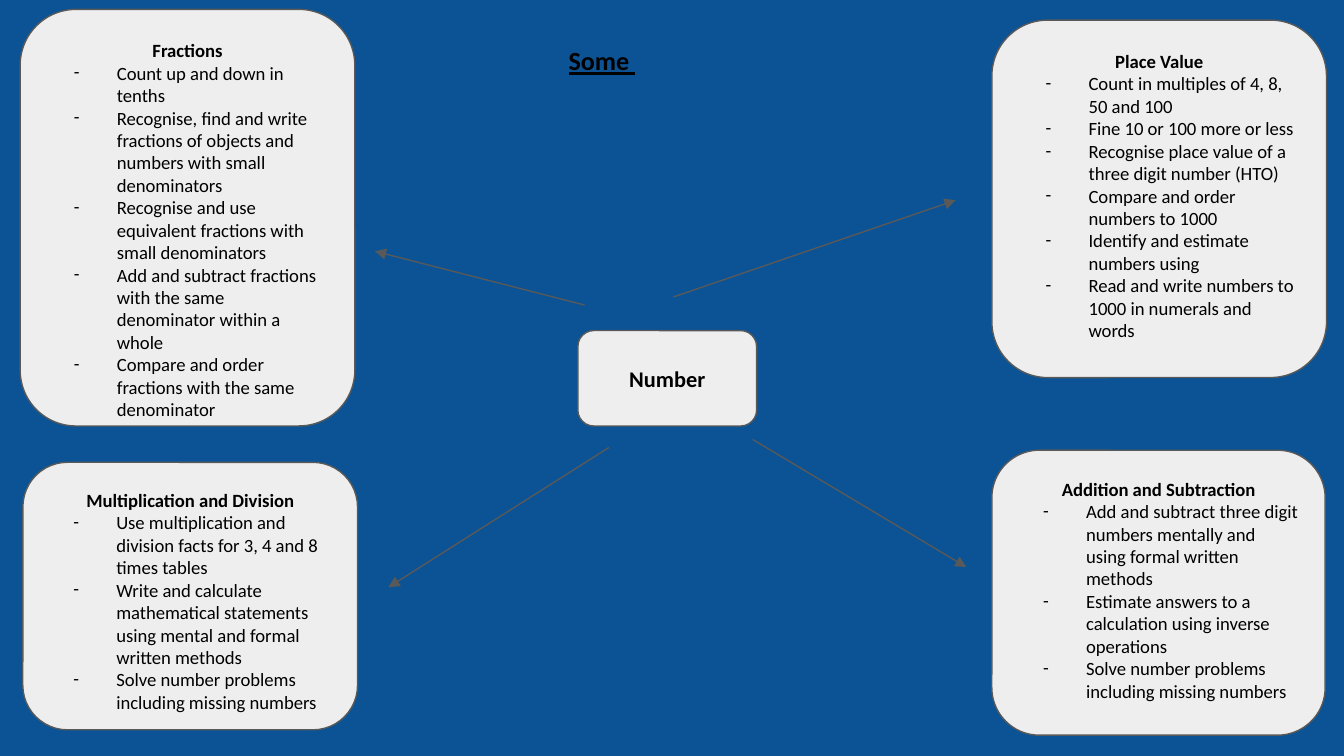
"""Build a mind map of the number curriculum with four topic cards."""
from dataclasses import dataclass
from typing import NamedTuple

from lxml.etree import SubElement
from pptx import Presentation
from pptx.dml.color import RGBColor
from pptx.enum.shapes import MSO_CONNECTOR, MSO_SHAPE
from pptx.enum.text import MSO_ANCHOR, MSO_AUTO_SIZE, PP_ALIGN
from pptx.oxml.ns import qn
from pptx.util import Inches, Pt


@dataclass(frozen=True)
class Theme:
    """Colours, type sizes and line width of the slide."""
    background: str = "0B5394"
    card: str = "EEEEEE"
    outline: str = "595959"
    ink: str = "000000"
    font: str = "Calibri"
    title_size: float = 14
    hub_size: float = 12
    body_size: float = 10
    line_width: float = 0.75


class Box(NamedTuple):
    """A position and size in inches."""
    left: float
    top: float
    width: float
    height: float


class Topic(NamedTuple):
    """A card with a heading and its objectives."""
    heading: str
    box: Box
    objectives: tuple[str, ...] = ()


class Arrow(NamedTuple):
    """An arrow from the hub towards a card."""
    start: tuple[float, float]
    end: tuple[float, float]


THEME = Theme()
CARD_WIDTH = 2.49
RIGHT_COLUMN = 7.38
INSET = 0.1
TITLE_BOX = Box(4.13, 0.23, 2.19, 0.52)
HUB = Topic("Number", Box(4.3, 2.46, 1.33, 0.71))

TOPICS = (
    Topic("Place Value", Box(RIGHT_COLUMN, 0.15, CARD_WIDTH, 2.66), (
        "Count in multiples of 4, 8, 50 and 100",
        "Fine 10 or 100 more or less",
        "Recognise place value of a three digit number (HTO)",
        "Compare and order numbers to 1000",
        "Identify and estimate numbers using",
        "Read and write numbers to 1000 in numerals and words",
    )),
    Topic("Addition and Subtraction", Box(RIGHT_COLUMN, 3.35, 2.48, 2.12), (
        "Add and subtract three digit numbers mentally and using formal written methods",
        "Estimate answers to a calculation using inverse operations",
        "Solve number problems including missing numbers",
    )),
    Topic("Multiplication and Division", Box(0.17, 3.44, CARD_WIDTH, 1.99), (
        "Use multiplication and division facts for 3, 4 and 8 times tables",
        "Write and calculate mathematical statements using mental and formal written methods",
        "Solve number problems including missing numbers",
    )),
    Topic("Fractions", Box(0.15, 0.07, CARD_WIDTH, 3.1), (
        "Count up and down in tenths",
        "Recognise, find and write fractions of objects and numbers with small denominators",
        "Recognise and use equivalent fractions with small denominators",
        "Add and subtract fractions with the same denominator within a whole",
        "Compare and order fractions with the same denominator",
    )),
)

ARROWS = (
    Arrow((5.01, 2.21), (7.11, 1.49)),
    Arrow((5.6, 3.27), (7.19, 4.22)),
    Arrow((4.35, 2.27), (2.79, 1.87)),
    Arrow((4.53, 3.33), (2.89, 4.37)),
)


def colour(value: str) -> RGBColor:
    """Turn a hex value into a colour."""
    return RGBColor.from_string(value)


def style_frame(frame, anchor: MSO_ANCHOR) -> None:
    """Set wrapping, insets and anchor of a text frame."""
    frame.word_wrap = True
    frame.auto_size = MSO_AUTO_SIZE.NONE
    frame.vertical_anchor = anchor
    frame.margin_left = frame.margin_right = Inches(INSET)
    frame.margin_top = frame.margin_bottom = Inches(INSET)


def style_paragraph(paragraph, size: float, bold: bool, align: PP_ALIGN) -> None:
    """Set the font and alignment of a paragraph."""
    paragraph.alignment = align
    font = paragraph.font
    font.name = THEME.font
    font.size = Pt(size)
    font.bold = bold
    font.color.rgb = colour(THEME.ink)


def add_dash(paragraph) -> None:
    """Give a paragraph a hanging dash."""
    properties = paragraph._p.get_or_add_pPr()
    properties.set("marL", str(Inches(0.5)))
    properties.set("indent", str(Inches(-0.32)))
    bullet_colour = SubElement(properties, qn("a:buClr"))
    SubElement(bullet_colour, qn("a:srgbClr"), val=THEME.ink)
    SubElement(properties, qn("a:buSzPts"), val=str(int(THEME.body_size * 100)))
    SubElement(properties, qn("a:buFont"), typeface=THEME.font)
    SubElement(properties, qn("a:buChar"), char="-")


def add_card(slide, topic: Topic, heading_size: float, anchor: MSO_ANCHOR) -> None:
    """Draw a rounded card with a heading and dashed objectives."""
    card = slide.shapes.add_shape(MSO_SHAPE.ROUNDED_RECTANGLE, *map(Inches, topic.box))
    card.shadow.inherit = False
    card.fill.solid()
    card.fill.fore_color.rgb = colour(THEME.card)
    card.line.color.rgb = colour(THEME.outline)
    card.line.width = Pt(THEME.line_width)
    frame = card.text_frame
    style_frame(frame, anchor)
    heading = frame.paragraphs[0]
    heading.text = topic.heading
    style_paragraph(heading, heading_size, True, PP_ALIGN.CENTER)
    for text in topic.objectives:
        objective = frame.add_paragraph()
        objective.text = text
        add_dash(objective)
        style_paragraph(objective, THEME.body_size, False, PP_ALIGN.LEFT)


def add_arrow(slide, arrow: Arrow) -> None:
    """Draw a straight arrow."""
    connector = slide.shapes.add_connector(
        MSO_CONNECTOR.STRAIGHT, *map(Inches, arrow.start + arrow.end))
    connector.line.color.rgb = colour(THEME.outline)
    connector.line.width = Pt(THEME.line_width)
    SubElement(connector.line._get_or_add_ln(), qn("a:tailEnd"), type="triangle")
    SubElement(connector._element.spPr, qn("a:effectLst"))


def set_title(slide, text: str) -> None:
    """Place and format the slide title."""
    title = slide.shapes.title
    title.left, title.top, title.width, title.height = map(Inches, TITLE_BOX)
    style_frame(title.text_frame, MSO_ANCHOR.TOP)
    heading = title.text_frame.paragraphs[0]
    heading.text = text
    style_paragraph(heading, THEME.title_size, True, PP_ALIGN.LEFT)
    heading.font.underline = True


def main() -> None:
    """Build and save the presentation."""
    presentation = Presentation()
    presentation.slide_width = Inches(10)
    presentation.slide_height = presentation.slide_width * 9 // 16
    slide = presentation.slides.add_slide(presentation.slide_layouts[5])
    slide.background.fill.solid()
    slide.background.fill.fore_color.rgb = colour(THEME.background)
    add_card(slide, HUB, THEME.hub_size, MSO_ANCHOR.MIDDLE)
    for topic in TOPICS:
        add_card(slide, topic, THEME.body_size, MSO_ANCHOR.TOP)
    for arrow in ARROWS:
        add_arrow(slide, arrow)
    set_title(slide, "Some ")
    presentation.save("out.pptx")


if __name__ == "__main__":
    main()
